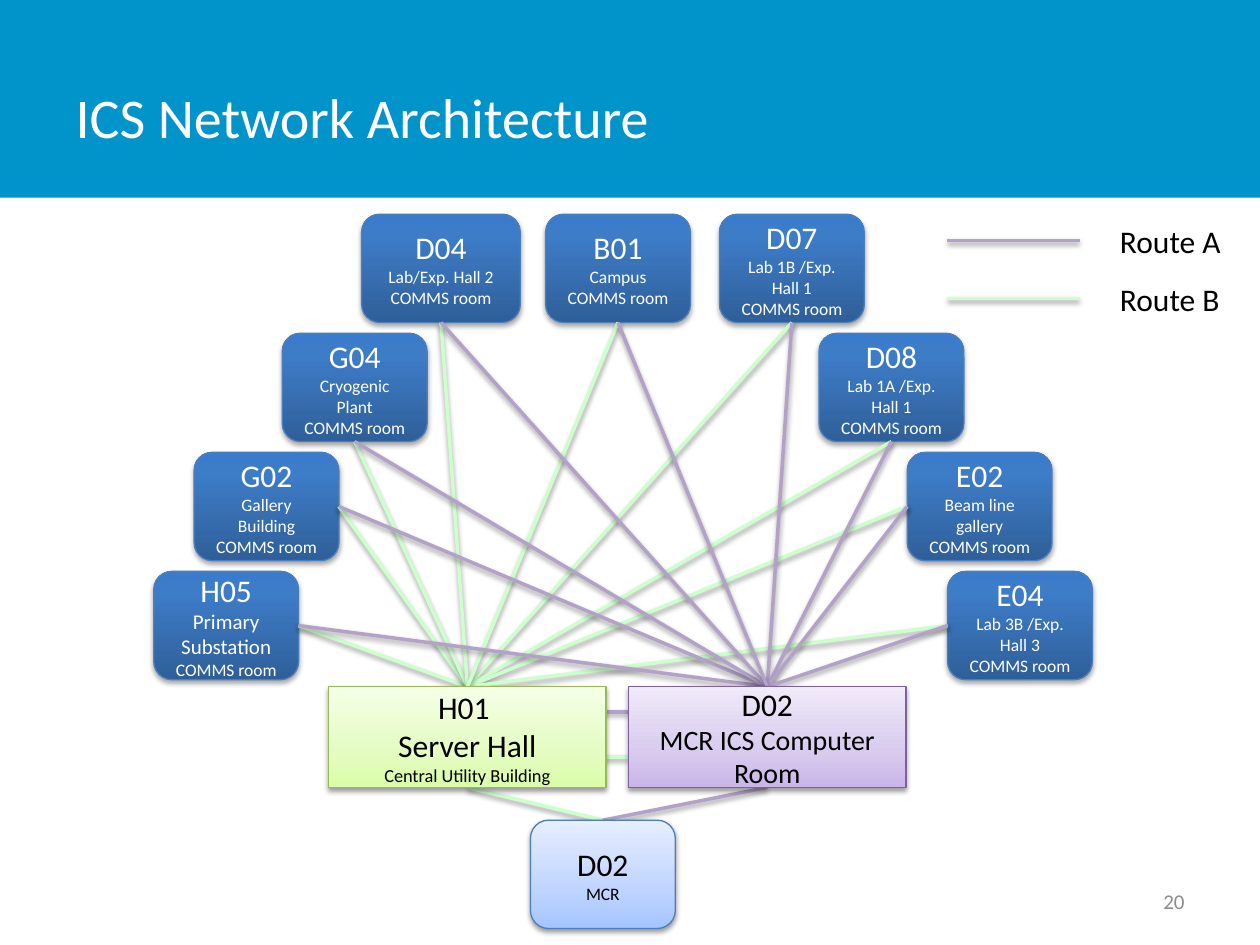
from lxml.etree import SubElement
from pptx import Presentation
from pptx.dml.color import RGBColor
from pptx.enum.shapes import MSO_CONNECTOR as CONN, MSO_SHAPE as SHAPE
from pptx.enum.text import MSO_ANCHOR as ANCHOR, PP_ALIGN as ALIGN
from pptx.oxml.ns import qn
from pptx.util import Inches, Pt

COLORS = {
    "band": "0094CA", "white": "FFFFFF", "black": "000000", "number": "8C8C8C",
    "route_a": "B3A2C7", "route_b": "CCFFCC",
}
STYLES = {
    "room": {"stops": [(0, "2F5F99"), (80, "3D7CC7"), (100, "3A7CCB")],
             "line": "4B7EBC", "text": "white", "geom": SHAPE.ROUNDED_RECTANGLE},
    "server": {"stops": [(0, "DAFDA7"), (35, "E4FCC2"), (100, "F5FFE7")],
               "line": "98B955", "text": "black", "geom": SHAPE.RECTANGLE},
    "computer": {"stops": [(0, "C9B5E8"), (35, "D8CBEE"), (100, "F0EAF9")],
                 "line": "7D60A0", "text": "black", "geom": SHAPE.RECTANGLE},
    "control": {"stops": [(0, "A4C4FF"), (35, "BFD4FF"), (100, "E6EEFF")],
                "line": "4B7EBC", "text": "black", "geom": SHAPE.ROUNDED_RECTANGLE},
}
TOP, LEFT, BOTTOM, RIGHT = range(4)
ROOM_W, WIDE_W, ROOM_H = 1.15, 1.26, 0.86
ROW_TOP, ROW_STEP = 1.7, 0.945
HUB_W, HUB_H, HUB_TOP = 2.2, 0.8, 5.45
SERVER_X, COMPUTER_X = 2.61, 4.99
LEGEND_X, LEGEND_W, LEGEND_TEXT_X = 7.52, 1.05, 8.79

ROOMS = [
    ("H05", "Primary Substation", 12, 3, 1.22, ROOM_W, RIGHT),
    ("G02", "Gallery Building", 10, 2, 1.54, ROOM_W, RIGHT),
    ("G04", "Cryogenic Plant", 10, 1, 2.24, ROOM_W, BOTTOM),
    ("D04", "Lab/Exp. Hall 2", 10, 0, 2.87, WIDE_W, BOTTOM),
    ("D07", "Lab 1B /Exp. Hall 1", 10, 0, 5.71, ROOM_W, BOTTOM),
    ("D08", "Lab 1A /Exp. Hall 1", 10, 1, 6.5, ROOM_W, BOTTOM),
    ("E02", "Beam line gallery", 10, 2, 7.2, ROOM_W, LEFT),
    ("E04", "Lab 3B /Exp. Hall 3", 10, 3, 7.52, ROOM_W, LEFT),
    ("B01", "Campus", 10, 0, 4.33, ROOM_W, BOTTOM),
]
HUBS = {
    "server": ([("H01 ", 18), ("Server Hall", 18), ("Central Utility Building", 10.5)],
               (SERVER_X, HUB_TOP, HUB_W, HUB_H)),
    "computer": ([("D02", 18), ("MCR ICS Computer Room", 16)],
                 (COMPUTER_X, HUB_TOP, HUB_W, HUB_H)),
    "control": ([("D02", 18), ("MCR", 10)], (4.21, 6.51, ROOM_W, ROOM_H)),
}
ROUTES = {"server": "route_b", "computer": "route_a"}
LEGEND = [("Route A", "route_a", 1.91, 5.65), ("Route B", "route_b", 2.37, 6.01)]


def rgb(name):
    return RGBColor.from_string(COLORS.get(name, name))


def inches(*values):
    return [Inches(v) for v in values]


def write(tf, lines, color, align, **fmt):
    for name, value in {"word_wrap": True, "vertical_anchor": ANCHOR.MIDDLE, **fmt}.items():
        setattr(tf, name, value)
    for i, (text, size) in enumerate(lines):
        p = tf.paragraphs[0] if i == 0 else tf.add_paragraph()
        p.alignment = align
        r = p.add_run()
        r.text = text
        for name, value in {"name": "Calibri", "size": Pt(size)}.items():
            setattr(r.font, name, value)
        r.font.color.rgb = rgb(color)


def add_shadow(sp, alpha, dist):
    effects = SubElement(sp._element.spPr, qn("a:effectLst"))
    shadow = SubElement(effects, qn("a:outerShdw"), blurRad=str(Pt(3.1)), dist=str(Pt(dist)),
                        dir="5400000", rotWithShape="0")
    color = SubElement(shadow, qn("a:srgbClr"), val=COLORS["black"])
    SubElement(color, qn("a:alpha"), val=str(alpha * 1000))


def add_box(s, style_name, lines, place, **fmt):
    style = STYLES[style_name]
    sp = s.shapes.add_shape(style["geom"], *inches(*place))
    sp.fill.gradient()
    sp.fill.gradient_angle = 90
    stops = sp._element.spPr.find(qn("a:gradFill")).find(qn("a:gsLst"))
    for stop in list(stops):
        stops.remove(stop)
    for pos, color in style["stops"]:
        stop = SubElement(stops, qn("a:gs"), pos=str(pos * 1000))
        SubElement(stop, qn("a:srgbClr"), val=color)
    sp.line.color.rgb = rgb(style["line"])
    sp.line.width = Pt(0.75)
    add_shadow(sp, *((35, 1.8) if style_name == "room" else (38, 1.6)))
    write(sp.text_frame, lines, style["text"], ALIGN.CENTER, **fmt)
    return sp


def add_link(s, color, ends=(0, 0, 0, 0)):
    line = s.shapes.add_connector(CONN.STRAIGHT, *inches(*ends))
    line.line.color.rgb = rgb(color)
    line.line.width = Pt(2)
    add_shadow(line, 38, 1.6)
    return line


def join(s, color, start, start_site, end, end_site):
    line = add_link(s, color)
    line.begin_connect(start, start_site)
    line.end_connect(end, end_site)


def add_label(s, text, size, color, place, align, **fmt):
    tb = s.shapes.add_textbox(*inches(*place))
    write(tb.text_frame, [(text, size)], color, align, **fmt)


def main():
    prs = Presentation()
    prs.slide_width, prs.slide_height = inches(10, 7.5)
    s = prs.slides.add_slide(prs.slide_layouts[5])
    tree = s.shapes._spTree

    band = s.shapes.add_shape(SHAPE.RECTANGLE, *inches(0, 0, 10, 1.57))
    band.shadow.inherit = False
    band.fill.solid()
    band.fill.fore_color.rgb = rgb("band")
    band.line.fill.background()
    tree.insert(2, band._element)

    title = s.shapes.title
    title.left, title.top, title.width, title.height = inches(0.5, 0.3, 7.81, 1.25)
    write(title.text_frame, [("ICS Network Architecture", 32)], "white", ALIGN.LEFT)
    add_label(s, "20", 12, "number", (7.17, 6.95, 2.33, 0.4), ALIGN.RIGHT)

    rooms = []
    for code, place, size, row, left, width, site in ROOMS:
        lines = [(code, 18), (place, size), ("COMMS room", 10)]
        box = add_box(s, "room", lines, (left, ROW_TOP + row * ROW_STEP, width, ROOM_H))
        rooms.append((box, site))

    hubs = {}
    for name, (lines, place) in HUBS.items():
        fmt = {"margin_left": 0, "margin_right": 0} if name == "server" else {}
        hubs[name] = add_box(s, name, lines, place, **fmt)

    for name, color in ROUTES.items():
        for room, site in rooms:
            join(s, color, hubs[name], TOP, room, site)
        join(s, color, hubs[name], BOTTOM, hubs["control"], TOP)

    for text, color, y, hub_y in LEGEND:
        add_link(s, color, (LEGEND_X + LEGEND_W, y, LEGEND_X, y))
        add_label(s, text, 18, "black", (LEGEND_TEXT_X, y - 0.2, 1.02, 0.4), ALIGN.LEFT,
                  word_wrap=False, vertical_anchor=ANCHOR.TOP)
        add_link(s, color, (COMPUTER_X, hub_y, SERVER_X + HUB_W - 0.26, hub_y))

    for hub in hubs.values():
        tree.append(hub._element)
    prs.save("out.pptx")


if __name__ == "__main__":
    main()
